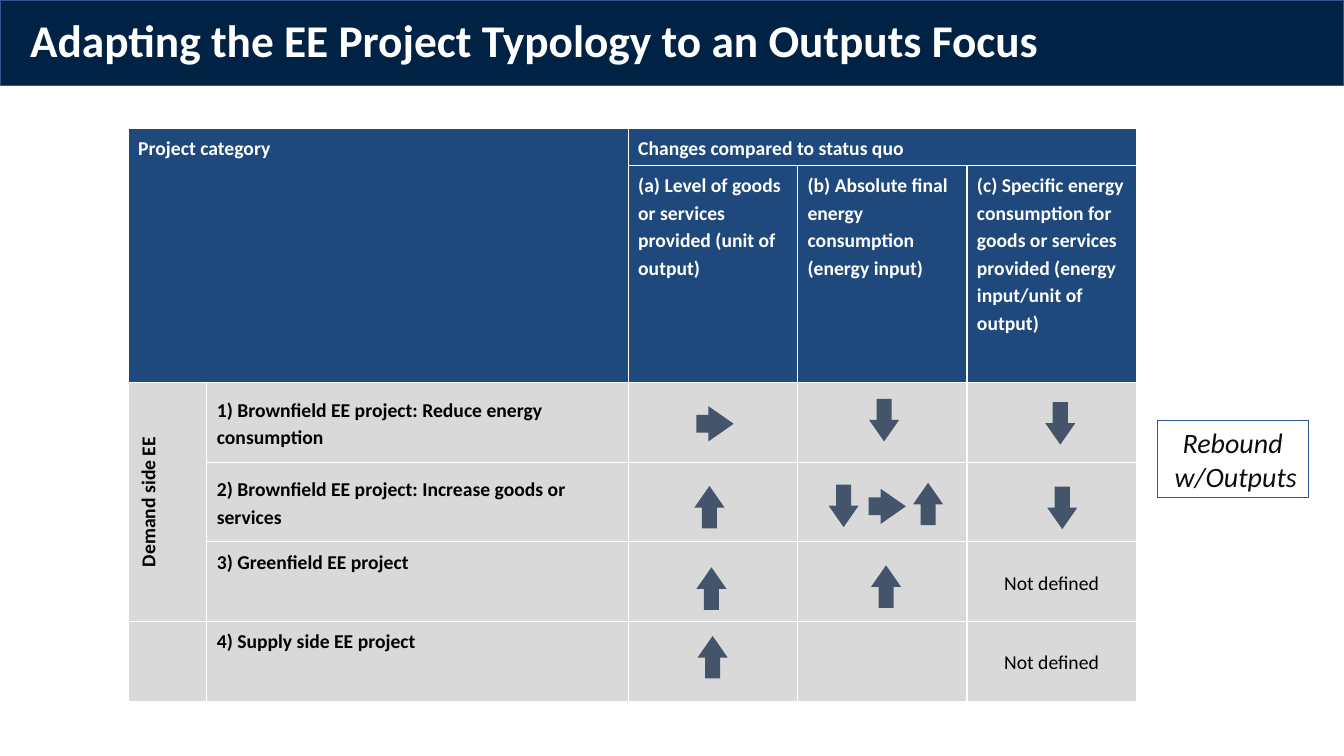
from lxml.etree import SubElement
from pptx import Presentation
from pptx.dml.color import RGBColor
from pptx.enum.shapes import MSO_SHAPE as SHAPE
from pptx.enum.text import MSO_ANCHOR as ANCHOR, MSO_AUTO_SIZE as AUTO, PP_ALIGN as ALIGN
from pptx.oxml.ns import qn
from pptx.util import Cm, Pt

NAVY = RGBColor(0x00, 0x23, 0x45)
NAVY_EDGE = RGBColor(0x32, 0x54, 0x91)
HEAD_BLUE = RGBColor(0x1F, 0x49, 0x7D)
BOX_BLUE = RGBColor(0x2F, 0x55, 0x97)
SLATE = RGBColor(0x44, 0x54, 0x6A)
GREY = RGBColor(0xD9, 0xD9, 0xD9)
INK = RGBColor(0x0D, 0x0D, 0x0D)
BLACK = RGBColor(0, 0, 0)
WHITE = RGBColor(255, 255, 255)

TITLE = "Adapting the EE Project Typology to an Outputs Focus"
REBOUND = ["Rebound", " w/Outputs"]
HEAD_ROWS = 2
ROWS = [
    ["Project category", "", "Changes compared to status quo", "", ""],
    ["", "", "(a) Level of goods or services provided (unit of output)",
     "(b) Absolute final energy consumption (energy input)",
     "(c) Specific energy consumption for goods or services provided (energy input/unit of output)"],
    ["Demand side EE", "1) Brownfield EE project: Reduce energy consumption", "", "", ""],
    ["", "2) Brownfield EE project: Increase goods or services", "", "", ""],
    ["", "3) Greenfield EE project", "", "", "Not defined"],
    ["", "4) Supply side EE project", "", "", "Not defined"],
]
MERGES = [((0, 0), (1, 1)), ((0, 2), (0, 4)), ((2, 0), (4, 0))]
COL_WIDTHS = [1.98, 10.62, 4.27, 4.27, 4.27]
ROW_HEIGHTS = [0.94, 5.46] + [2.01] * 4
TOP_ANCHORED = [(4, 1), (5, 1)]

ROTATION = {"right": 0, "down": 90, "up": 270}
ARROWS = [
    ("right", 18.02, 10.68), ("down", 22.28, 10.59), ("down", 26.72, 10.67),
    ("up", 17.88, 12.78), ("down", 21.26, 12.75), ("right", 22.36, 12.76),
    ("up", 23.39, 12.7), ("down", 26.77, 12.8),
    ("up", 17.93, 14.83), ("up", 22.33, 14.78),
    ("up", 17.96, 16.56),
]


def write(p, text, color, para=None, **font):
    """Put one formatted run into a paragraph."""
    r = p.add_run()
    r.text = text
    r.font.color.rgb = color
    for name, value in {"name": "Calibri", **font}.items():
        setattr(r.font, name, value)
    for name, value in (para or {}).items():
        setattr(p, name, value)


def add_title(s):
    """Format the title placeholder as the dark band."""
    sp = s.shapes.title
    box = {"left": 0, "top": 0, "width": Cm(33.87), "height": Cm(2.16)}
    for name, value in box.items():
        setattr(sp, name, value)
    sp.fill.solid()
    sp.fill.fore_color.rgb = NAVY
    sp.line.color.rgb = NAVY_EDGE
    sp.line.width = Pt(1)
    tf = sp.text_frame
    frame = {"margin_left": Cm(0.76), "vertical_anchor": ANCHOR.MIDDLE,
             "word_wrap": True, "auto_size": AUTO.NONE}
    for name, value in frame.items():
        setattr(tf, name, value)
    write(tf.paragraphs[0], TITLE, WHITE, {"alignment": ALIGN.LEFT, "line_spacing": 0.9},
          size=Pt(32.4), bold=True)


def add_borders(cell):
    """Draw thin white lines on all four sides of a cell."""
    tc_pr = cell._tc.get_or_add_tcPr()
    for side in ("lnL", "lnR", "lnT", "lnB"):
        ln = SubElement(tc_pr, qn(f"a:{side}"), w=str(Pt(1)))
        SubElement(SubElement(ln, qn("a:solidFill")), qn("a:srgbClr"), val=str(WHITE))


def add_typology(s):
    """Add the table of project categories."""
    table = s.shapes.add_table(len(ROWS), len(COL_WIDTHS), Cm(3.23), Cm(3.23),
                               Cm(sum(COL_WIDTHS)), Cm(sum(ROW_HEIGHTS))).table
    for col, width in zip(table.columns, COL_WIDTHS):
        col.width = Cm(width)
    for row, height in zip(table.rows, ROW_HEIGHTS):
        row.height = Cm(height)
    for start, end in MERGES:
        table.cell(*start).merge(table.cell(*end))
    for i, texts in enumerate(ROWS):
        head = i < HEAD_ROWS
        for j, text in enumerate(texts):
            cell = table.cell(i, j)
            add_borders(cell)
            cell.fill.solid()
            cell.fill.fore_color.rgb = HEAD_BLUE if head else GREY
            if not text:
                continue
            centred = not head and j != 1
            top = head or (i, j) in TOP_ANCHORED
            cell.vertical_anchor = ANCHOR.TOP if top else ANCHOR.MIDDLE
            para = {"alignment": ALIGN.CENTER if centred else ALIGN.LEFT,
                    "line_spacing": 1.15, "space_after": Pt(6)}
            write(cell.text_frame.paragraphs[0], text, WHITE if head else BLACK, para,
                  size=Pt(14), bold=head or j < 2)
    table.cell(HEAD_ROWS, 0)._tc.get_or_add_tcPr().set("vert", "vert270")


def add_arrow(s, direction, x, y):
    """Add a block arrow centred on a point."""
    w, h = (0.94, 0.89) if direction == "right" else (1.07, 0.76)
    sp = s.shapes.add_shape(SHAPE.RIGHT_ARROW, Cm(x - w / 2), Cm(y - h / 2), Cm(w), Cm(h))
    sp.adjustments[1] = 0.716
    sp.rotation = ROTATION[direction]
    sp.shadow.inherit = False
    sp.fill.solid()
    sp.fill.fore_color.rgb = SLATE
    sp.line.fill.background()


def add_rebound(s):
    """Add the outlined note beside the table."""
    sp = s.shapes.add_shape(SHAPE.RECTANGLE, Cm(29.16), Cm(10.59), Cm(3.81), Cm(1.96))
    sp.shadow.inherit = False
    sp.fill.background()
    sp.line.color.rgb = BOX_BLUE
    sp.line.width = Pt(0.75)
    tf = sp.text_frame
    tf.word_wrap = False
    for i, text in enumerate(REBOUND):
        p = tf.add_paragraph() if i else tf.paragraphs[0]
        write(p, text, INK, {"alignment": ALIGN.CENTER}, size=Pt(20), italic=True)


def main():
    """Build the slide and save it."""
    prs = Presentation()
    prs.slide_width, prs.slide_height = Cm(33.87), Cm(19.05)
    s = prs.slides.add_slide(prs.slide_layouts[5])
    add_title(s)
    add_rebound(s)
    add_typology(s)
    for arrow in ARROWS:
        add_arrow(s, *arrow)
    prs.save("out.pptx")


if __name__ == "__main__":
    main()
